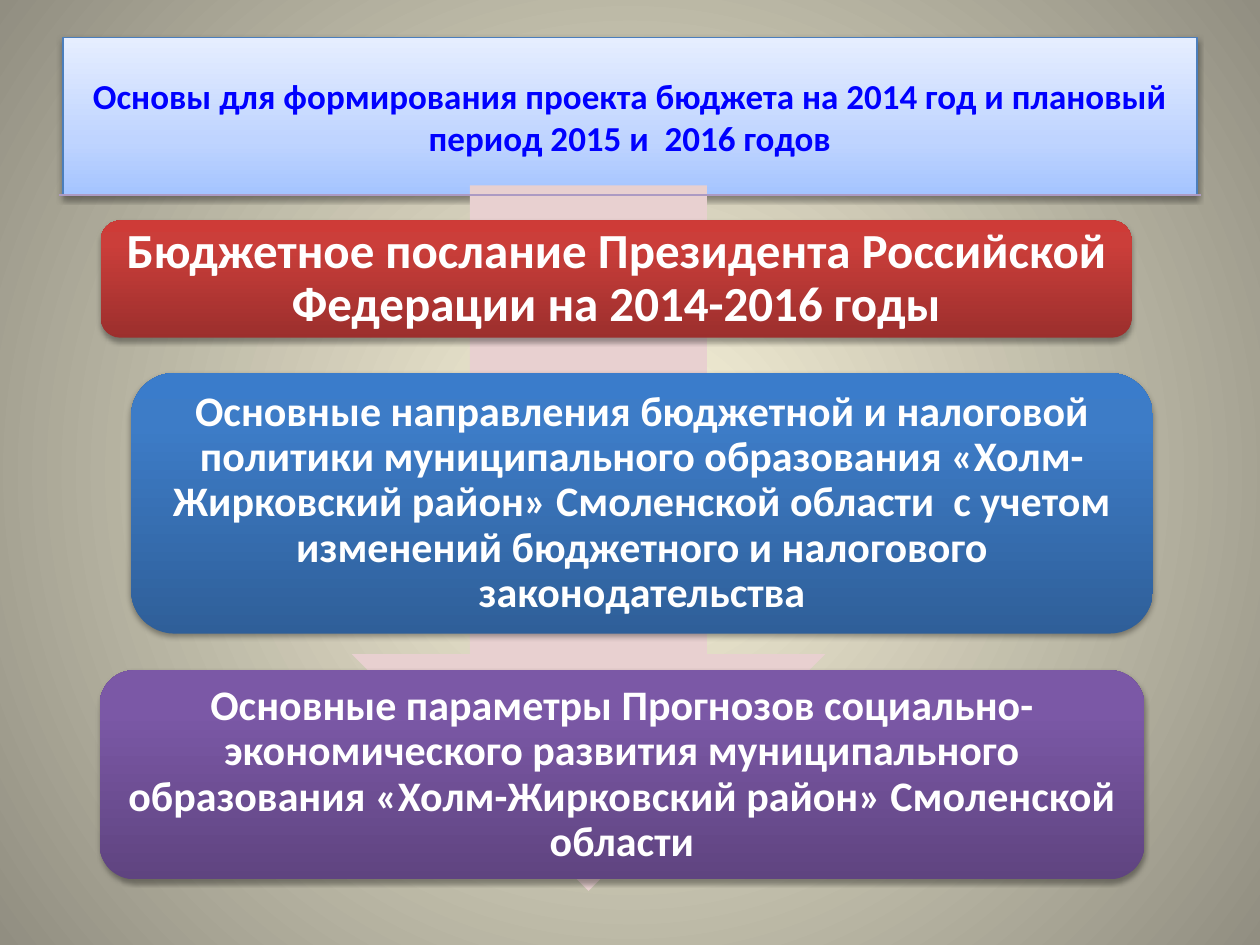
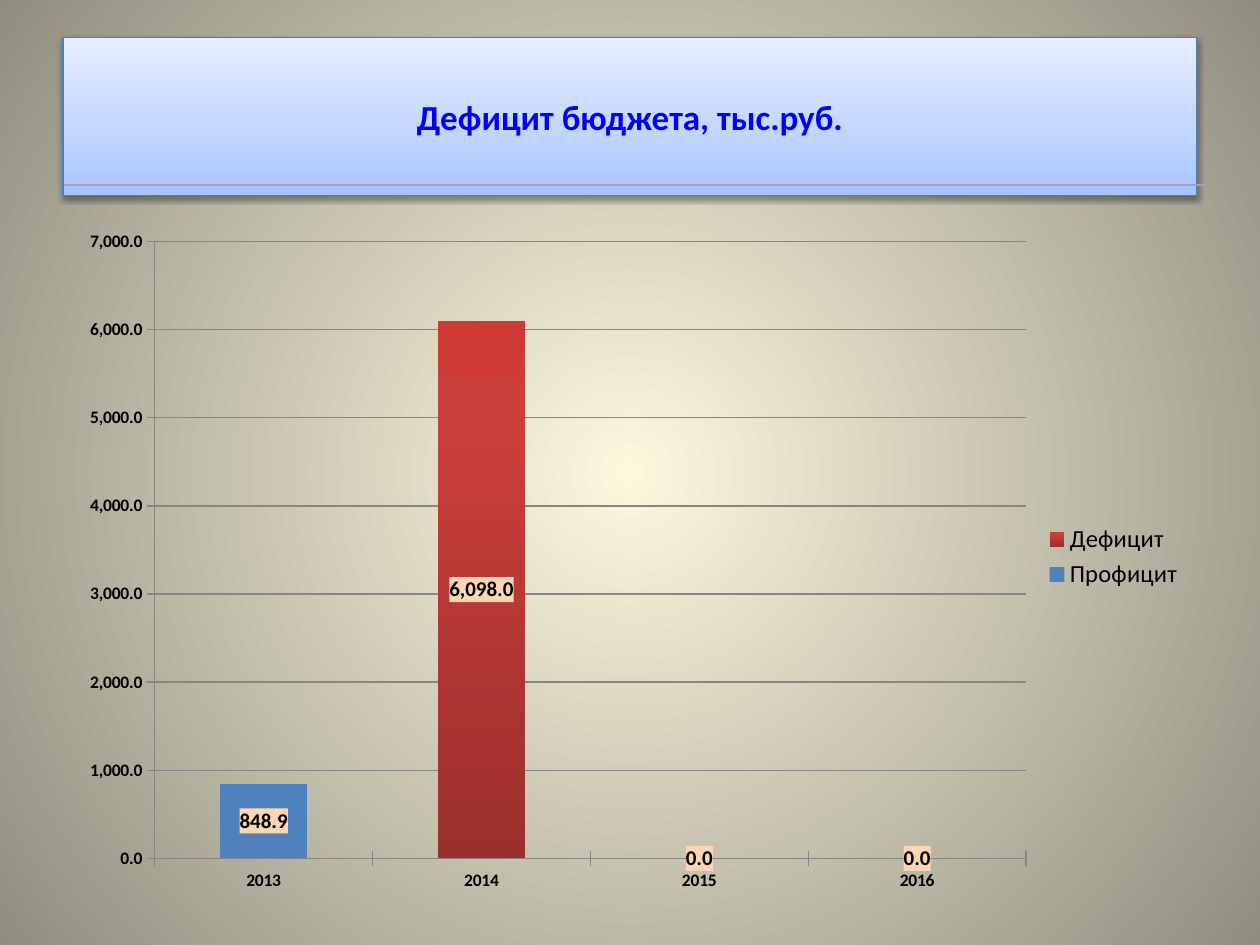
"""Build two budget slides: the foundations of the draft budget and the deficit chart."""
import pptx
import pptx.chart.data
import pptx.dml.color
import pptx.enum.chart
import pptx.enum.dml
import pptx.enum.shapes
import pptx.enum.text
import pptx.oxml
import pptx.oxml.ns
import pptx.util

Pt = pptx.util.Pt
RGBColor = pptx.dml.color.RGBColor
qn = pptx.oxml.ns.qn
DRAWING_NS = pptx.oxml.ns.nsdecls("a")
CHART_NS = pptx.oxml.ns.nsdecls("c", "a")

FONT = "Calibri"
BLACK = RGBColor(0x00, 0x00, 0x00)
WHITE = RGBColor(0xFF, 0xFF, 0xFF)
TITLE_BLUE = RGBColor(0x00, 0x00, 0xFF)
BAND_BORDER = RGBColor(0x4B, 0x7E, 0xBC)
RULE_LILAC = RGBColor(0xAC, 0x9A, 0xC3)
ARROW_PINK = RGBColor(0xE8, 0xD0, 0xD0)
SURPLUS_BLUE = RGBColor(0x4F, 0x81, 0xBD)
LABEL_PEACH = RGBColor(0xFC, 0xD5, 0xB5)
GRID_GREY = RGBColor(0x86, 0x86, 0x86)
BACKGROUND = [(0, RGBColor(0xFC, 0xF7, 0xDD)), (100, RGBColor(0x91, 0x8E, 0x81))]
BAND = [(0, RGBColor(0xA4, 0xC4, 0xFF)), (35, RGBColor(0xBF, 0xD4, 0xFF)),
        (100, RGBColor(0xE6, 0xEE, 0xFF))]
RED = [(0, RGBColor(0x9C, 0x2F, 0x2D)), (80, RGBColor(0xCB, 0x3E, 0x3A)),
       (100, RGBColor(0xCE, 0x3B, 0x37))]
BLUE = [(0, RGBColor(0x2F, 0x5F, 0x99)), (80, RGBColor(0x3D, 0x7C, 0xC7)),
        (100, RGBColor(0x3A, 0x7C, 0xCB))]
PURPLE = [(0, RGBColor(0x5F, 0x44, 0x80)), (80, RGBColor(0x7B, 0x58, 0xA6)),
          (100, RGBColor(0x7C, 0x57, 0xA8))]


def paint_gradient(fill, owner, stops):
    """Fill with an upward gradient and return its element."""
    fill.gradient()
    fill.gradient_angle = 90
    gradient = next(owner.iter(qn("a:gradFill")))
    stop_list = gradient.find(qn("a:gsLst"))
    for stop in list(stop_list):
        stop_list.remove(stop)
    for position, color in stops:
        stop_list.append(pptx.oxml.parse_xml(
            f'<a:gs {DRAWING_NS} pos="{position * 1000}"><a:srgbClr val="{color}"/></a:gs>'))
    return gradient


def style_panel(shape, stops, shadow_opacity, text, size, color):
    """Give a shape its gradient, soft shadow and centred bold text."""
    paint_gradient(shape.fill, shape._element, stops)
    shape.shadow.inherit = False
    shape._element.spPr.find(qn("a:effectLst")).append(pptx.oxml.parse_xml(
        f'<a:outerShdw {DRAWING_NS} blurRad="{Pt(3.1)}" dist="{Pt(1.7)}" dir="5400000" '
        f'rotWithShape="0"><a:srgbClr val="{BLACK}"><a:alpha val="{shadow_opacity * 1000}"/>'
        '</a:srgbClr></a:outerShdw>'))
    text_frame = shape.text_frame
    text_frame.text = text
    text_frame.word_wrap = True
    text_frame.auto_size = pptx.enum.text.MSO_AUTO_SIZE.NONE
    text_frame.vertical_anchor = pptx.enum.text.MSO_ANCHOR.MIDDLE
    paragraph = text_frame.paragraphs[0]
    paragraph.alignment = pptx.enum.text.PP_ALIGN.CENTER
    font = paragraph.runs[0].font
    font.name, font.size, font.bold = FONT, Pt(size), True
    font.color.rgb = color


presentation = pptx.Presentation()
presentation.slide_width, presentation.slide_height = Pt(720), Pt(540)

master = presentation.slide_master
background = paint_gradient(master.background.fill, master.element, BACKGROUND)
background.replace(background.find(qn("a:lin")), pptx.oxml.parse_xml(
    f'<a:path {DRAWING_NS} path="circle">'
    '<a:fillToRect l="50000" t="50000" r="50000" b="50000"/></a:path>'))

TITLES = [
    "Основы для формирования проекта бюджета на 2014 год и плановый период 2015 и  2016 годов",
    "Дефицит бюджета, тыс.руб.",
]
for title_text in TITLES:
    slide = presentation.slides.add_slide(presentation.slide_layouts[5])
    title = slide.shapes.title
    title.left, title.top, title.width, title.height = Pt(36), Pt(21.6), Pt(648), Pt(90)
    title.line.color.rgb = BAND_BORDER
    title.line.width = Pt(0.75)
    style_panel(title, BAND, 38, title_text, 20, TITLE_BLUE)
foundations_slide, deficit_slide = presentation.slides

arrow = foundations_slide.shapes.add_shape(
    pptx.enum.shapes.MSO_SHAPE.DOWN_ARROW, Pt(200.9), Pt(105.9), Pt(270.7), Pt(403.2))
arrow.shadow.inherit = False
arrow.fill.solid()
arrow.fill.fore_color.rgb = ARROW_PINK
arrow.line.fill.background()

FOUNDATIONS = [
    (57.6, 126, 589, 67, RED, 28,
     "Бюджетное послание Президента Российской Федерации на 2014-2016 годы"),
    (56.9, 383, 597, 119.5, PURPLE, 24,
     "Основные параметры Прогнозов социально-экономического развития муниципального "
     "образования «Холм-Жирковский район» Смоленской области"),
    (74.9, 213.1, 584, 149, BLUE, 24,
     "Основные направления бюджетной и налоговой политики муниципального образования "
     "«Холм-Жирковский район» Смоленской области  с учетом изменений бюджетного и "
     "налогового законодательства"),
]
for left, top, width, height, stops, size, text in FOUNDATIONS:
    box = foundations_slide.shapes.add_shape(
        pptx.enum.shapes.MSO_SHAPE.ROUNDED_RECTANGLE, Pt(left), Pt(top), Pt(width), Pt(height))
    box.line.fill.background()
    style_panel(box, stops, 35, text, size, WHITE)
    frame = box.text_frame
    frame.margin_left = frame.margin_right = frame.margin_top = frame.margin_bottom = Pt(3)
    frame.paragraphs[0].line_spacing = 0.9

for slide, left, top in [(foundations_slide, 33.8, 111.6), (deficit_slide, 36.7, 105.8)]:
    rule = slide.shapes.add_connector(
        pptx.enum.shapes.MSO_CONNECTOR.STRAIGHT, Pt(left), Pt(top), Pt(left + 652.3), Pt(top))
    rule.line.color.rgb = RULE_LILAC
    rule.line.width = Pt(1)
    rule._element.spPr.append(pptx.oxml.parse_xml(f"<a:effectLst {DRAWING_NS}/>"))

chart_data = pptx.chart.data.CategoryChartData(number_format="#,##0.0")
chart_data.categories = ["2013", "2014", "2015", "2016"]
chart_data.add_series("Профицит", [848.9, None, None, None])
chart_data.add_series("Дефицит", [None, 6098, 0, 0])
chart = deficit_slide.shapes.add_chart(
    pptx.enum.chart.XL_CHART_TYPE.COLUMN_STACKED,
    Pt(36.7), Pt(122.4), Pt(646.6), Pt(391.7), chart_data).chart
chart.has_title = False
chart.font.name, chart.font.size = FONT, Pt(10)
chart.font.color.rgb = BLACK
chart.has_legend = True
chart.legend.position = pptx.enum.chart.XL_LEGEND_POSITION.RIGHT
chart.legend.include_in_layout = False
chart.legend.font.size = Pt(14)

for axis in (chart.category_axis, chart.value_axis):
    axis.major_tick_mark = pptx.enum.chart.XL_TICK_MARK.CROSS
    axis.tick_labels.font.bold = True
    axis.format.line.color.rgb = GRID_GREY
chart.value_axis.minimum_scale, chart.value_axis.maximum_scale = 0, 7000
chart.value_axis.major_unit = 1000
chart.value_axis.major_gridlines.format.line.color.rgb = GRID_GREY
chart.value_axis.tick_labels.number_format = "#,##0.0"
chart.value_axis.tick_labels.number_format_is_linked = False

plot = chart.plots[0]
plot.gap_width, plot.overlap = 150, 100
plot.vary_by_categories = False
surplus, deficit = plot.series
surplus.format.fill.solid()
surplus.format.fill.fore_color.rgb = SURPLUS_BLUE
paint_gradient(deficit.format.fill, deficit._element, RED)
for series in (surplus, deficit):
    labels = series.data_labels
    labels.show_value = True
    labels.number_format = "#,##0.0"
    labels.number_format_is_linked = False
    labels.font.size, labels.font.bold = Pt(12), True
    labels._element.find(qn("c:numFmt")).addnext(pptx.oxml.parse_xml(
        f'<c:spPr {CHART_NS}><a:solidFill><a:srgbClr val="{LABEL_PEACH}"/></a:solidFill></c:spPr>'))

plot_area = chart._chartSpace.chart.plotArea
for layout in plot_area.findall(qn("c:layout")):
    plot_area.remove(layout)
plot_area.insert(0, pptx.oxml.parse_xml(
    f'<c:layout {CHART_NS}><c:manualLayout><c:layoutTarget val="inner"/>'
    '<c:xMode val="edge"/><c:yMode val="edge"/><c:x val="0.08"/><c:y val="0.04"/>'
    '<c:w val="0.77"/><c:h val="0.9"/></c:manualLayout></c:layout>'))

presentation.save("out.pptx")
